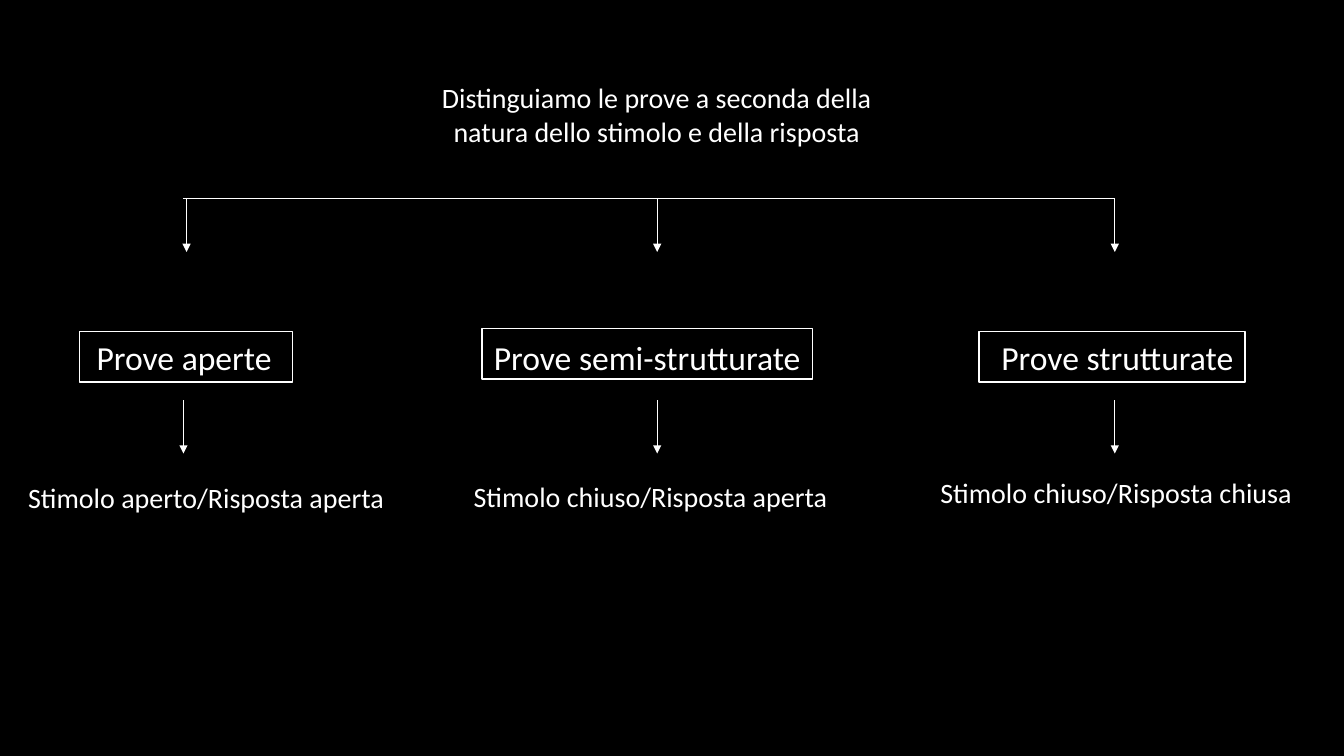
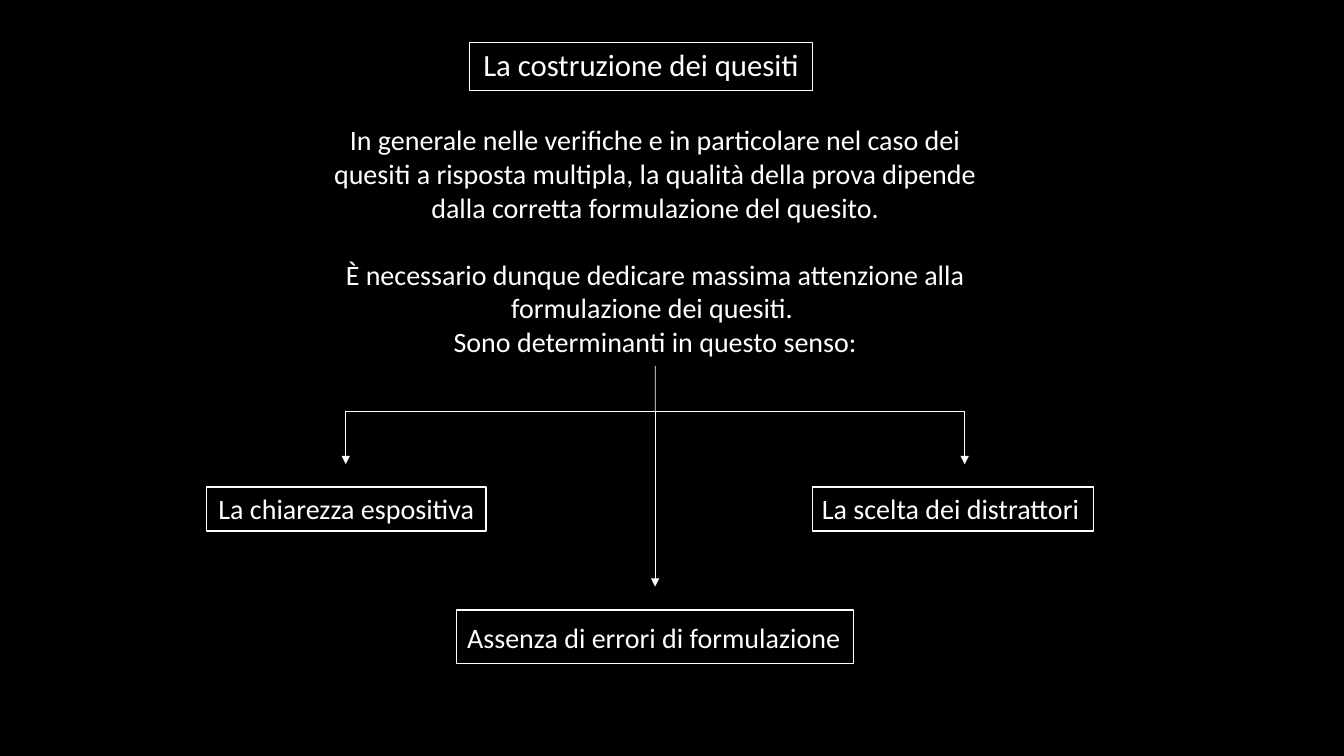
from dataclasses import dataclass
from typing import Optional

from lxml.etree import SubElement
from pptx import Presentation
from pptx.dml.color import RGBColor
from pptx.enum.shapes import MSO_CONNECTOR, MSO_SHAPE
from pptx.enum.text import MSO_ANCHOR, MSO_AUTO_SIZE, PP_ALIGN
from pptx.oxml.ns import qn
from pptx.util import Inches, Pt

SLIDE_WIDTH = Inches(13.333)
SLIDE_HEIGHT = Inches(7.5)
COLORS = {"background": "000000", "ink": "FFFFFF"}
FONT = {"name": "Calibri"}
PADDING = Inches(0.05)
LABEL_HEIGHT = 5.87


@dataclass(frozen=True)
class Area:
    left: float
    top: float
    width: float
    height: float


@dataclass(frozen=True)
class Concept:
    text: str
    area: Area
    size: int = 20
    shift: float = 0
    drop: float = 0


@dataclass(frozen=True)
class Passage:
    paragraphs: tuple
    area: Area
    gaps: tuple = (0,)
    align: PP_ALIGN = PP_ALIGN.CENTER
    wrap: bool = True


@dataclass(frozen=True)
class Link:
    x1: float
    y1: float
    x2: float
    y2: float
    arrow: bool = True


@dataclass(frozen=True)
class Branch:
    concept: Concept
    caption: str
    caption_area: Area
    axis: float
    entry: float


def across(share: float) -> int:
    return round(SLIDE_WIDTH * share / 100)


def down(share: float) -> int:
    return round(SLIDE_HEIGHT * share / 100)


def place(area: Area) -> tuple:
    return across(area.left), down(area.top), across(area.width), down(area.height)


def ink() -> RGBColor:
    return RGBColor.from_string(COLORS["ink"])


def apply(target, formats: dict) -> None:
    for attribute, value in formats.items():
        setattr(target, attribute, value)


def write(paragraph, text: str, size: int, align: PP_ALIGN, gap: float = 0) -> None:
    paragraph.text = text
    paragraph.alignment = align
    if gap:
        paragraph.space_before = Pt(gap)
    apply(paragraph.font, {**FONT, "size": Pt(size)})
    paragraph.font.color.rgb = ink()


def draw_concept(slide, concept: Concept) -> None:
    box = slide.shapes.add_shape(MSO_SHAPE.RECTANGLE, *place(concept.area))
    box.shadow.inherit = False
    box.fill.background()
    box.line.color.rgb = ink()
    box.line.width = Pt(1)
    apply(box.text_frame, {
        "word_wrap": True,
        "vertical_anchor": MSO_ANCHOR.TOP,
        "margin_left": PADDING + across(concept.shift),
        "margin_right": PADDING - across(concept.shift),
        "margin_top": PADDING + down(concept.drop),
        "margin_bottom": 0,
    })
    write(box.text_frame.paragraphs[0], concept.text, concept.size, PP_ALIGN.CENTER)


def draw_passage(slide, passage: Passage):
    box = slide.shapes.add_textbox(*place(passage.area))
    frame = box.text_frame
    apply(frame, {
        "word_wrap": passage.wrap,
        "auto_size": MSO_AUTO_SIZE.NONE if passage.wrap else MSO_AUTO_SIZE.SHAPE_TO_FIT_TEXT,
    })
    for index, (text, gap) in enumerate(zip(passage.paragraphs, passage.gaps)):
        paragraph = frame.add_paragraph() if index else frame.paragraphs[0]
        write(paragraph, text, 20, passage.align, gap)
    return box


def draw_link(slide, link: Link, source: Optional[object] = None) -> None:
    line = slide.shapes.add_connector(
        MSO_CONNECTOR.STRAIGHT,
        across(link.x1), down(link.y1), across(link.x2), down(link.y2),
    )
    line.line.color.rgb = ink()
    line.line.width = Pt(0.5)
    if link.arrow:
        SubElement(line.line._get_or_add_ln(), qn("a:tailEnd"), type="triangle")
    SubElement(line._element.spPr, qn("a:effectLst"))
    if source is not None:
        line.begin_connect(source, 2)


def new_slide(deck):
    slide = deck.slides.add_slide(deck.slide_layouts[6])
    fill = slide.background.fill
    fill.solid()
    fill.fore_color.rgb = RGBColor.from_string(COLORS["background"])
    return slide


HEADING = Passage(
    ("Distinguiamo le prove a seconda della natura dello stimolo e della risposta",),
    Area(30, 10, 37.73, 10.27),
)
BRANCHES = (
    Branch(
        Concept("Prove aperte", Area(5.93, 43.87, 15.83, 6.67), 24, -0.15),
        "Stimolo aperto/Risposta aperta", Area(1.35, 62.93, 28.28, LABEL_HEIGHT), 13.65, 13.88,
    ),
    Branch(
        Concept("Prove semi-strutturate", Area(35.85, 43.47, 24.6, 6.67), 24, 0, 0.4),
        "Stimolo chiuso/Risposta aperta", Area(34.5, 62.8, 28.57, LABEL_HEIGHT), 48.9, 48.9,
    ),
    Branch(
        Concept("Prove strutturate", Area(72.83, 43.87, 19.8, 6.67), 24, 0.41),
        "Stimolo chiuso/Risposta chiusa", Area(69.23, 62.27, 27.97, LABEL_HEIGHT), 82.95, 82.95,
    ),
)
TEST_FORK = 26.27

EXPLANATION = Passage(
    (
        "In generale nelle verifiche e in particolare nel caso dei quesiti a risposta multipla, "
        "la qualità della prova dipende dalla corretta formulazione del quesito.",
        "È necessario dunque dedicare massima attenzione alla formulazione dei quesiti. ",
        "Sono determinanti in questo senso:",
    ),
    Area(22.28, 15.6, 52.95, 32.8),
    (0, 24, 0),
)
QUESTION_CONCEPTS = (
    Concept("La costruzione dei quesiti", Area(34.95, 5.6, 25.5, 6.4), 22, 0, -0.27),
    Concept("La chiarezza espositiva", Area(15.38, 64.4, 20.78, LABEL_HEIGHT)),
    Concept("La scelta dei distrattori", Area(60.45, 64.4, 20.93, LABEL_HEIGHT), shift=-0.19),
    Concept("Assenza di errori di formulazione", Area(33.98, 80.67, 29.55, 7.07),
            shift=-0.11, drop=0.67),
)
SPINE = 48.75
QUESTION_FORK = 54.4
CLARITY_AXIS, DISTRACTOR_AXIS = 25.73, 71.78
QUESTION_LINKS = (
    Link(CLARITY_AXIS, QUESTION_FORK, DISTRACTOR_AXIS, QUESTION_FORK, arrow=False),
    Link(CLARITY_AXIS, QUESTION_FORK, CLARITY_AXIS, 61.4),
    Link(DISTRACTOR_AXIS, QUESTION_FORK, DISTRACTOR_AXIS, 61.4),
    Link(SPINE, QUESTION_FORK, SPINE, 77.6),
)


def build_test_types(deck) -> None:
    slide = new_slide(deck)
    draw_passage(slide, HEADING)
    draw_link(slide, Link(BRANCHES[0].axis, TEST_FORK, BRANCHES[-1].axis, TEST_FORK, arrow=False))
    for branch in BRANCHES:
        draw_link(slide, Link(branch.entry, TEST_FORK, branch.entry, 33.33))
        draw_concept(slide, branch.concept)
        draw_link(slide, Link(branch.axis, 52.93, branch.axis, 60))
        draw_passage(slide, Passage(
            (branch.caption,), branch.caption_area, align=PP_ALIGN.LEFT, wrap=False,
        ))


def build_question_design(deck) -> None:
    slide = new_slide(deck)
    explanation = draw_passage(slide, EXPLANATION)
    draw_link(slide, Link(SPINE, 48.4, SPINE, QUESTION_FORK, arrow=False), explanation)
    for link in QUESTION_LINKS:
        draw_link(slide, link)
    for concept in QUESTION_CONCEPTS:
        draw_concept(slide, concept)


def main() -> None:
    deck = Presentation()
    apply(deck, {"slide_width": SLIDE_WIDTH, "slide_height": SLIDE_HEIGHT})
    build_test_types(deck)
    build_question_design(deck)
    deck.save("out.pptx")


if __name__ == "__main__":
    main()
